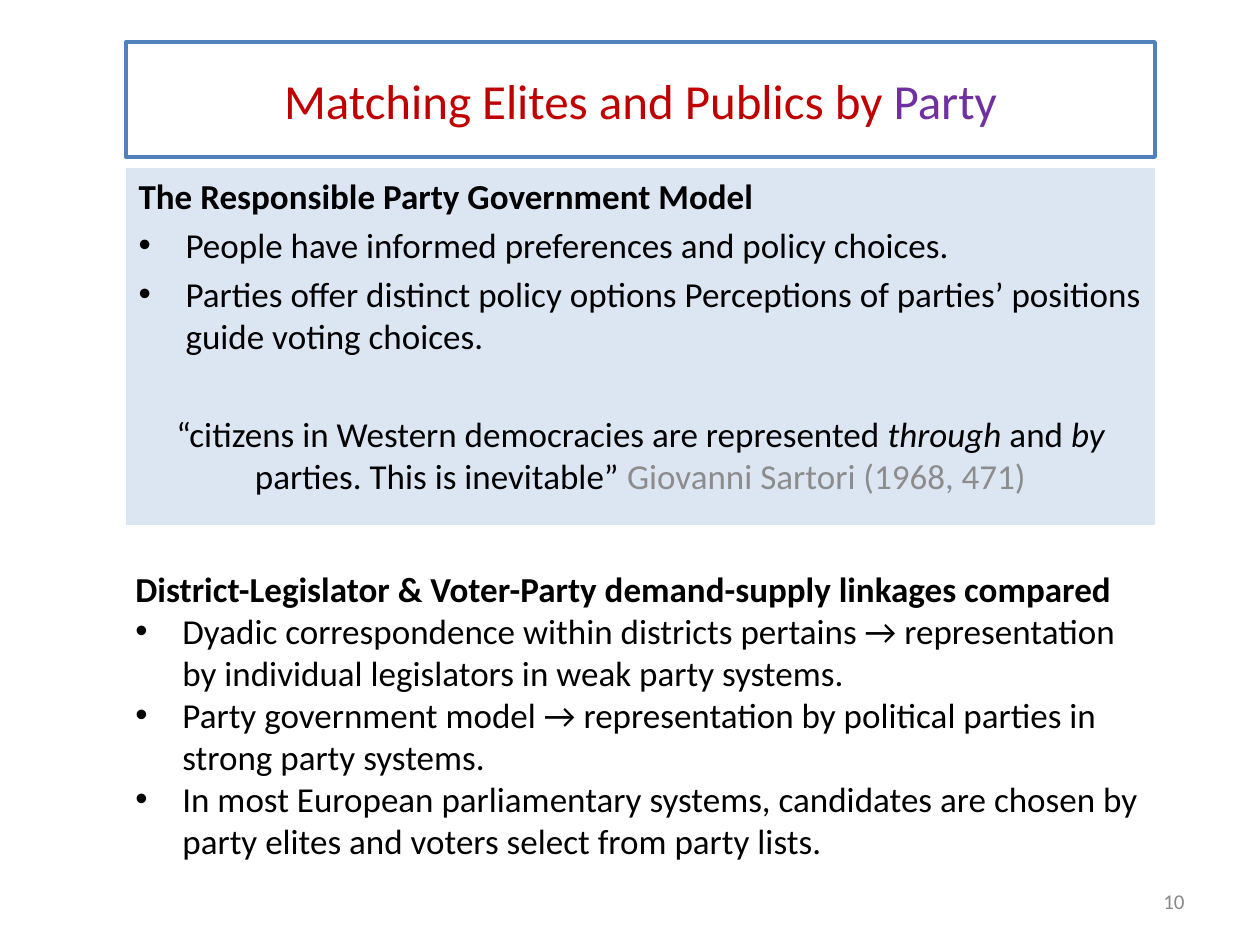
from dataclasses import dataclass
from lxml import etree
from pptx import Presentation
from pptx.dml.color import RGBColor
from pptx.enum.text import MSO_ANCHOR, MSO_AUTO_SIZE, PP_ALIGN
from pptx.oxml.ns import qn
from pptx.util import Inches, Pt

LEFT, MID, RIGHT = PP_ALIGN.LEFT, PP_ALIGN.CENTER, PP_ALIGN.RIGHT
TOP, CENTER = MSO_ANCHOR.TOP, MSO_ANCHOR.MIDDLE
FIXED = MSO_AUTO_SIZE.NONE


@dataclass(frozen=True)
class Theme:
    font: str = "Calibri"
    ink: str = "000000"
    red: str = "C00000"
    plum: str = "7030A0"
    cite: str = "8C8C8C"
    gray: str = "898989"
    edge: str = "4F81BD"
    pale: str = "DCE6F2"
    head: int = 28
    body: int = 20
    foot: int = 12


T = Theme()
TITLE = [("Matching Elites and Publics by ", {}), ("Party", {"color": T.plum})]
MODEL = "The Responsible Party Government Model"
POINTS = [
    "People have informed preferences and policy choices.",
    "Parties offer distinct policy options Perceptions of parties’ positions guide voting choices.",
]
QUOTE = [
    ("“citizens in Western democracies are represented ", {}),
    ("through ", {"italic": True}),
    ("and ", {}),
    ("by ", {"italic": True}),
    ("parties. This is inevitable” ", {}),
    ("Giovanni Sartori (1968, 471)", {"color": T.cite}),
]
LINKS = "District-Legislator & Voter-Party demand-supply linkages compared"
CASES = [
    "Dyadic correspondence within districts pertains → representation by individual legislators in weak party systems.",
    "Party government model → representation by political parties in strong party systems.",
    "In most European parliamentary systems, candidates are chosen by party elites and voters select from party lists.",
]
PAGE = "10"

WIDE, HIGH = 1260, 945
SCALE = Inches(10) / WIDE
HANG = 47
GAP, BREAK = 4, 32


def emu(px):
    return round(px * SCALE)


def place(shape, x, y, w, h, anchor=TOP):
    shape.left, shape.top, shape.width, shape.height = map(emu, (x, y, w, h))
    frame = shape.text_frame
    frame.word_wrap = True
    frame.auto_size = FIXED
    frame.vertical_anchor = anchor
    return frame


def write(frame, text, size=T.body, color=T.ink, bold=False, align=LEFT, bullet=False, before=0):
    first = frame.paragraphs[0]
    para = frame.add_paragraph() if first.runs else first
    if bullet:
        props = para._p.get_or_add_pPr()
        props.set("marL", str(emu(HANG)))
        props.set("indent", str(-emu(HANG)))
        etree.SubElement(props, qn("a:buFont"), typeface="Arial")
        etree.SubElement(props, qn("a:buChar"), char="•")
    para.alignment = align
    para.space_before = Pt(before)
    for words, style in [(text, {})] if isinstance(text, str) else text:
        run = para.add_run()
        run.text = words
        font = run.font
        font.name, font.size, font.bold = T.font, Pt(size), bold
        font.italic = style.get("italic", False)
        font.color.rgb = RGBColor.from_string(style.get("color", color))


def main():
    deck = Presentation()
    deck.slide_width, deck.slide_height = emu(WIDE), emu(HIGH)
    slide = deck.slides.add_slide(deck.slide_layouts[0])
    title, body = slide.placeholders

    title.line.color.rgb = RGBColor.from_string(T.edge)
    title.line.width = Pt(2.25)
    frame = place(title, 126, 42, 1029, 115, CENTER)
    write(frame, TITLE, size=T.head, color=T.red, align=MID)

    body.fill.solid()
    body.fill.fore_color.rgb = RGBColor.from_string(T.pale)
    frame = place(body, 126, 168, 1029, 357)
    write(frame, MODEL, bold=True)
    for point in POINTS:
        write(frame, point, bullet=True, before=GAP)
    write(frame, QUOTE, align=MID, before=BREAK)

    frame = place(slide.shapes.add_textbox(0, 0, 0, 0), 123, 561, 1029, 310)
    write(frame, LINKS, bold=True)
    for case in CASES:
        write(frame, case, bullet=True)

    frame = place(slide.shapes.add_textbox(0, 0, 0, 0), 903, 876, 294, 50, CENTER)
    write(frame, PAGE, size=T.foot, color=T.gray, align=RIGHT)
    deck.save("out.pptx")


if __name__ == "__main__":
    main()
